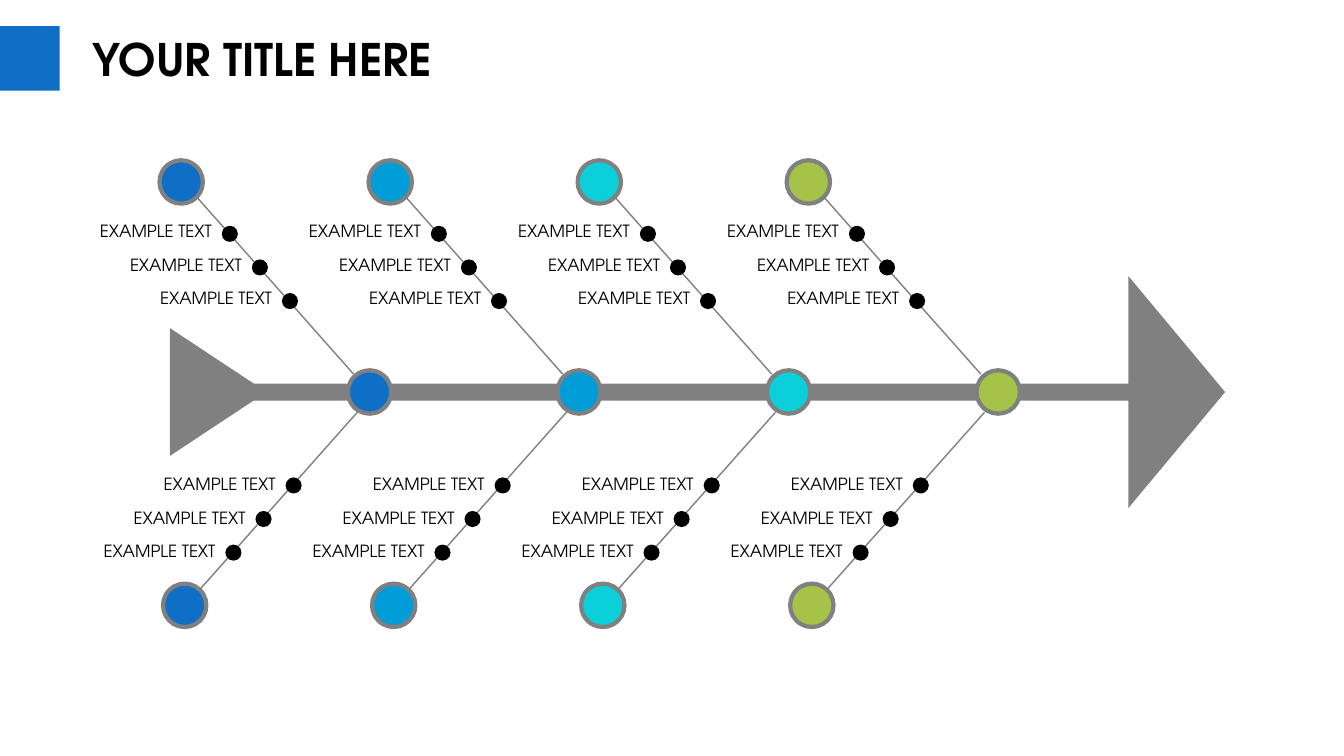
from dataclasses import dataclass
from typing import Any

from lxml import etree
from pptx import Presentation
from pptx import util as u
from pptx.dml.color import RGBColor
from pptx.enum import shapes, text
from pptx.oxml import ns

GREY, BLACK = "808080", "000000"
COLOURS = ["0F6FC6", "009DD9", "0BD0D9", "A5C249"]
NODE, DOT = 31, 11.5                  # circle diameters
SPINE_PITCH, RIB_PITCH = 149.76, 149.4
DOT_STEP = 21.5


def colour(value):
    return RGBColor.from_string(value)


@dataclass
class Fishbone:
    page: Any
    font: str = "TeX Gyre Adventor"

    def shape(self, kind, left, top, width, height, fill, outline=None, turn=0):
        item = self.page.shapes.add_shape(
            kind, u.Pt(left), u.Pt(top), u.Pt(width), u.Pt(height))
        item.shadow.inherit = False
        item.rotation = turn
        item.fill.solid()
        item.fill.fore_color.rgb = colour(fill)
        if outline:
            item.line.color.rgb = colour(outline)
            item.line.width = u.Pt(3)
        else:
            item.line.fill.background()

    def node(self, left, top, fill):
        self.shape(shapes.MSO_SHAPE.OVAL, left, top, NODE, NODE, fill, GREY)

    def triangle(self, left, top, width, height):
        self.shape(shapes.MSO_SHAPE.ISOSCELES_TRIANGLE,
                   left, top, width, height, GREY, turn=90)

    def line(self, start, end):
        bone = self.page.shapes.add_connector(
            shapes.MSO_CONNECTOR.STRAIGHT, *[u.Pt(v) for v in (*start, *end)])
        bone.line.color.rgb = colour(GREY)
        bone.line.width = u.Pt(1)
        etree.SubElement(bone._element.spPr, ns.qn("a:effectLst"))

    def add_wording(self, box, wording, size, align, bold=False):
        box.text_frame.word_wrap = True
        para = box.text_frame.paragraphs[0]
        para.alignment = align
        span = para.add_run()
        span.text = wording
        span.font.name = self.font
        span.font.size = u.Pt(size)
        span.font.bold = bold
        span.font.color.rgb = colour(BLACK)

    def title(self, wording, left, top, width, height):
        box = self.page.shapes.title
        box.left, box.top = u.Pt(left), u.Pt(top)
        box.width, box.height = u.Pt(width), u.Pt(height)
        box.text_frame.vertical_anchor = text.MSO_ANCHOR.MIDDLE
        self.add_wording(box, wording, 32, text.PP_ALIGN.LEFT, bold=True)

    def label(self, wording, right, top):
        width = 104.4
        box = self.page.shapes.add_textbox(
            u.Pt(right - width), u.Pt(top), u.Pt(width), u.Pt(23.8))
        self.add_wording(box, wording, 12, text.PP_ALIGN.RIGHT)

    def rib(self, shift, fill, start, end, node, dot, dot_rise, label_gap):
        self.line((start[0] + shift, start[1]), (end[0] + shift, end[1]))
        self.node(node[0] + shift, node[1], fill)
        for step in range(3):
            left = dot[0] + shift + step * DOT_STEP
            top = dot[1] + step * dot_rise
            self.label("EXAMPLE TEXT", left, top - label_gap)
            self.shape(shapes.MSO_SHAPE.OVAL, left, top, DOT, DOT, BLACK)


def main():
    deck = Presentation()
    deck.slide_width, deck.slide_height = u.Pt(960.48), u.Pt(540)
    chart = Fishbone(deck.slides.add_slide(deck.slide_layouts[5]))

    # Title with its accent block
    chart.shape(shapes.MSO_SHAPE.RECTANGLE, 0, 18.7, 42.7, 46.1, COLOURS[0])
    chart.title("YOUR TITLE HERE", 59, 18.7, 266.4, 46.1)

    # Spine, head and tail
    chart.shape(shapes.MSO_SHAPE.RECTANGLE, 164.2, 274, 676.8, 12.2, GREY)
    chart.triangle(758.2, 245.5, 165.6, 69.1)
    chart.triangle(110.2, 245.5, 91.4, 69.1)
    for index, fill in enumerate(COLOURS):
        chart.node(248.6 + index * SPINE_PITCH, 264.5, fill)

    # Ribs above, then below, the spine
    upper = dict(start=(252.7, 267.2), end=(140.3, 140.4), node=(114, 114.5),
                 dot=(158.5, 161.3), dot_rise=24, label_gap=7.2)
    lower = dict(start=(255.4, 294.5), end=(142.7, 421.2), node=(116.5, 416.9),
                 dot=(161.1, 389), dot_rise=-24, label_gap=6)
    for side in (upper, lower):
        for index, fill in enumerate(COLOURS):
            chart.rib(index * RIB_PITCH, fill, **side)

    deck.save("out.pptx")


if __name__ == "__main__":
    main()
